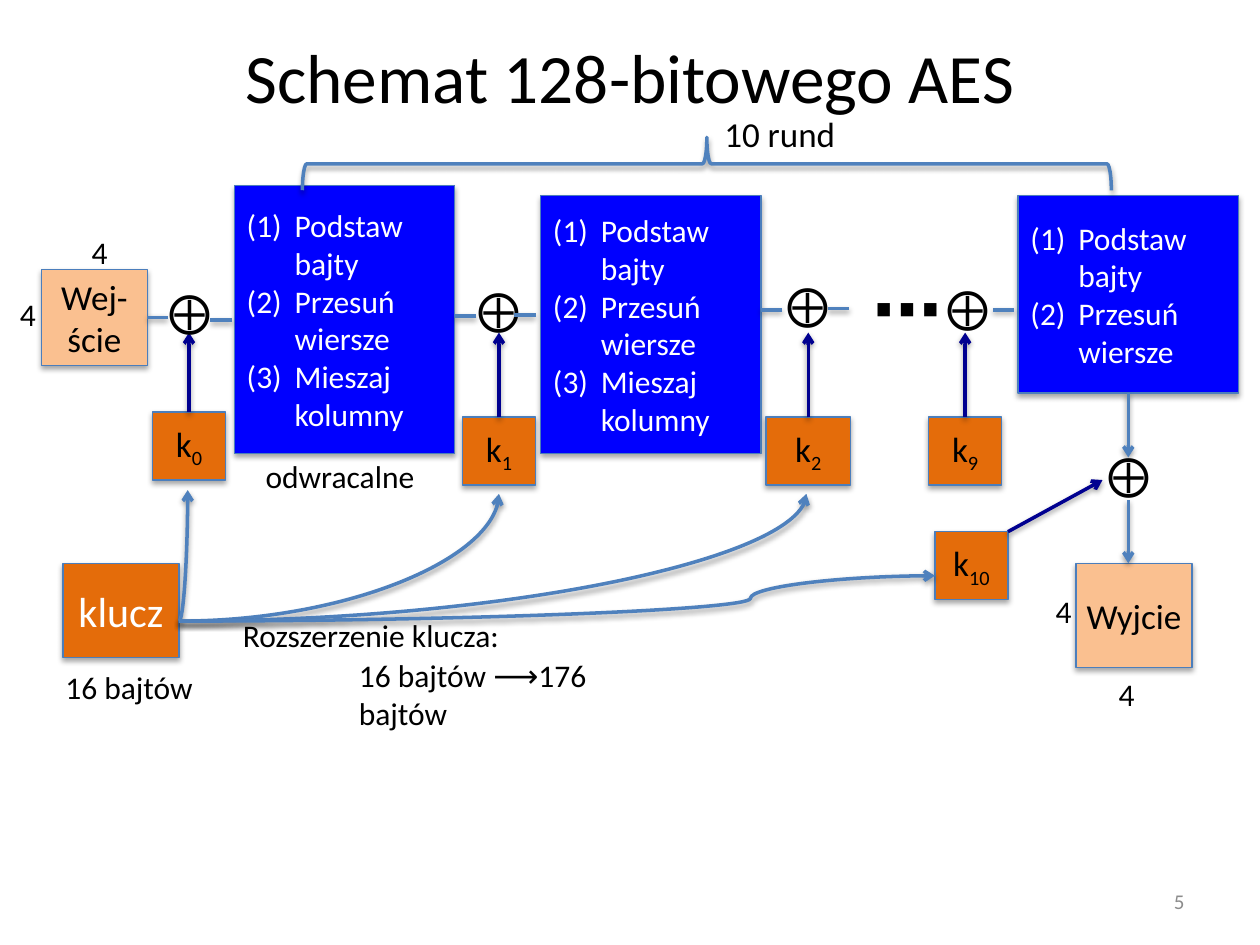
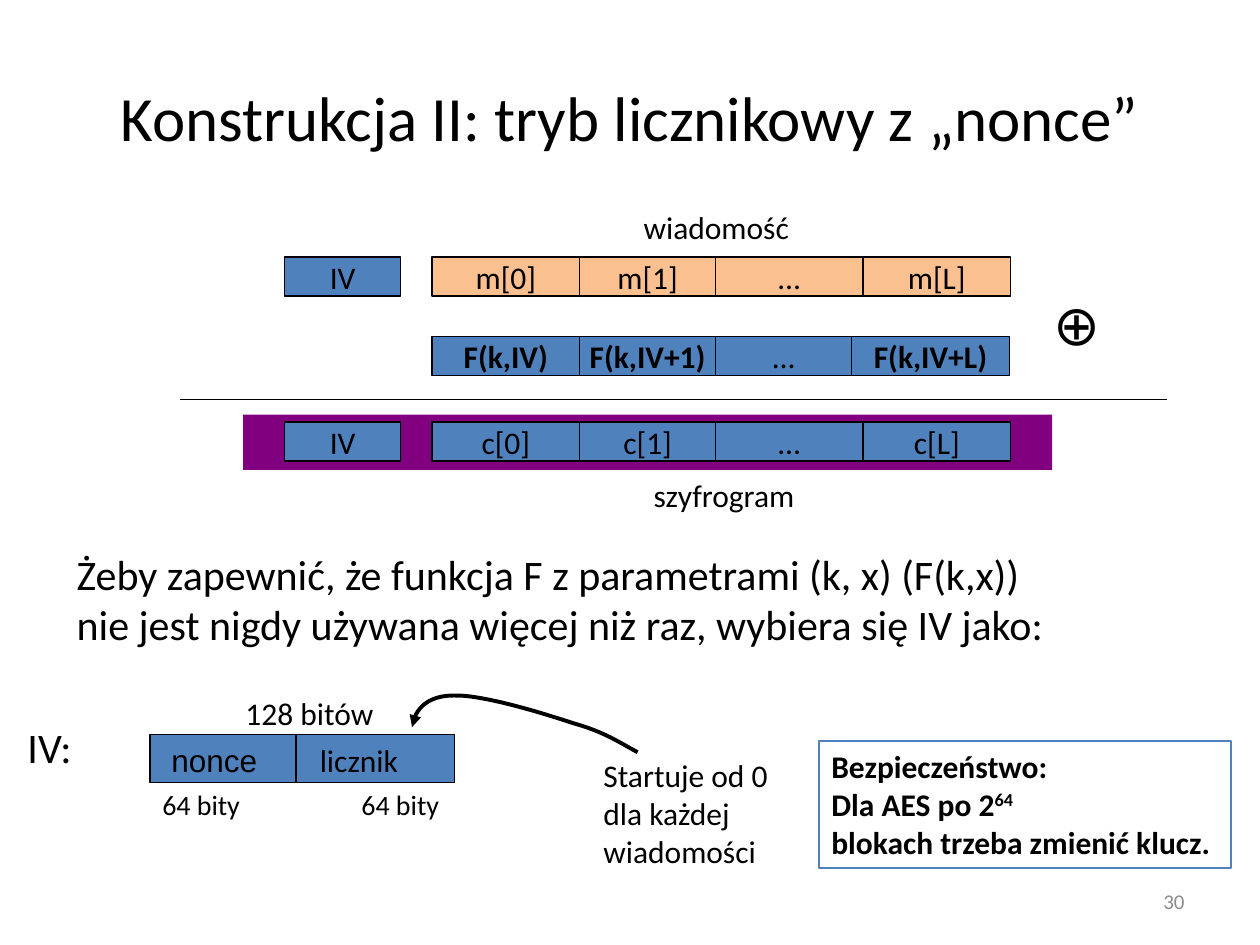
"""Builds two slides on the AES scheme and counter mode with a nonce."""
from lxml import etree
from pptx import Presentation
from pptx.dml.color import RGBColor
from pptx.enum import shapes, text
from pptx.oxml import ns
from pptx.util import Inches, Pt

BLACK = RGBColor(0x00, 0x00, 0x00)
WHITE = RGBColor(0xFF, 0xFF, 0xFF)
GREY = RGBColor(0x8C, 0x8C, 0x8C)
BLUE = RGBColor(0x4F, 0x81, 0xBD)
EDGE = RGBColor(0x4B, 0x7E, 0xBC)
NAVY = RGBColor(0x00, 0x00, 0x90)
ROYAL = RGBColor(0x00, 0x00, 0xFF)
PEACH = RGBColor(0xFA, 0xC0, 0x90)
ORANGE = RGBColor(0xE4, 0x6C, 0x0A)
PURPLE = RGBColor(0x80, 0x00, 0x80)
LEFT, MID, RIGHT = text.PP_ALIGN.LEFT, text.PP_ALIGN.CENTER, text.PP_ALIGN.RIGHT
TOP, HALF = text.MSO_ANCHOR.TOP, text.MSO_ANCHOR.MIDDLE
STRAIGHT, CURVE = shapes.MSO_CONNECTOR.STRAIGHT, shapes.MSO_CONNECTOR.CURVE


def put(box, words="", size=18, color=BLACK, fill=None, edge=None, align=None,
        anchor=None, wrap=False, bold=False, font="Calibri", shade=False,
        script="", base=0):
    """Adds a text box, or a rectangle when it has a fill or an edge."""
    place = [Inches(v) for v in box]
    rect = fill is not None or edge is not None
    if rect:
        shape = page.shapes.add_shape(shapes.MSO_SHAPE.RECTANGLE, *place)
        if not shade:
            shape.shadow.inherit = False
        if fill is None:
            shape.fill.background()
        else:
            shape.fill.solid()
            shape.fill.fore_color.rgb = fill
        if edge is None:
            shape.line.fill.background()
        else:
            shape.line.color.rgb = edge
            shape.line.width = Pt(0.75)
    else:
        shape = page.shapes.add_textbox(*place)
    frame = shape.text_frame
    frame.word_wrap = wrap
    frame.vertical_anchor = anchor or (HALF if rect else TOP)
    for n, line in enumerate(words.split("\n")):
        para = frame.add_paragraph() if n else frame.paragraphs[0]
        para.text = line
        para.alignment = align or (MID if rect else LEFT)
        para.font.name, para.font.size = font, Pt(size)
        para.font.bold, para.font.color.rgb = bold, color
    if script:
        run = para.add_run()
        run.text = script
        run._r.get_or_add_rPr().set("baseline", str(base))
    return shape


def link(x1, y1, x2, y2, color=BLUE, width=2, tip=False, kind=STRAIGHT, shade=True):
    """Adds a connector, with an arrowhead at its end if tip is set."""
    line = page.shapes.add_connector(kind, *[Inches(v) for v in (x1, y1, x2, y2)])
    line.line.color.rgb = color
    line.line.width = Pt(width)
    if tip:
        etree.SubElement(line.line._get_or_add_ln(), ns.qn("a:tailEnd"), type="arrow")
    if not shade:
        etree.SubElement(line._element.spPr, ns.qn("a:effectLst"))
    return line


deck = Presentation()
deck.slide_width, deck.slide_height = Inches(10), Inches(7.5)
pages = []
for title, size, tall, num in [
        ("Schemat 128-bitowego AES", 39.6, 0.61, "5"),
        ("Konstrukcja II: tryb licznikowy z „nonce”", 36, 1.25, "30")]:
    page = deck.slides.add_slide(deck.slide_layouts[6])
    pages.append(page)
    put((0.5, 0.3, 9, tall), title, size, align=MID, anchor=HALF, wrap=True)
    put((7.17, 6.95, 2.33, 0.4), num, 12, GREY, align=RIGHT, anchor=HALF, wrap=True)

page = pages[0]
steps = ["Podstaw bajty", "Przesuń wiersze", "Mieszaj kolumny"]
rounds = []
for x, y, high, count in [(1.86, 1.47, 2.13, 3), (4.29, 1.55, 2.05, 3),
                          (8.08, 1.55, 1.57, 2)]:
    box = put((x, y, 1.75, high), "\n".join(steps[:count]), color=WHITE, fill=ROYAL,
              edge=EDGE, align=LEFT, wrap=True, shade=True)
    box.text_frame.margin_right = 0
    for para in box.text_frame.paragraphs:
        props = para._p.get_or_add_pPr()
        props.set("marL", str(Inches(0.38)))
        props.set("indent", str(-Inches(0.38)))
        mark = etree.Element(ns.qn("a:buAutoNum"), type="arabicParenBoth")
        props.find(ns.qn("a:defRPr")).addprevious(mark)
    rounds.append(box)

start = put((0.33, 2.14, 0.84, 0.76), "Wej-ście", 20, fill=PEACH, edge=EDGE,
            wrap=True, shade=True)
end = put((8.54, 4.47, 0.92, 0.83), "Wyjcie", 20, fill=PEACH, edge=EDGE,
          wrap=True, shade=True)
end.text_frame.margin_left = end.text_frame.margin_right = 0
put((0.5, 4.47, 0.92, 0.75), "klucz", 24, WHITE, ORANGE, EDGE, wrap=True, shade=True)

for sub, x, y, wide in [("0", 1.21, 3.27, 0.58), ("1", 3.67, 3.31, 0.58),
                        ("2", 6.08, 3.31, 0.67), ("9", 7.37, 3.31, 0.58),
                        ("10", 7.42, 4.22, 0.58)]:
    key = put((x, y, wide, 0.54), "k", 20, fill=ORANGE, edge=EDGE, wrap=True,
              shade=True, script=sub, base=-25000)
    if sub == "10":
        link(x + wide, y, 8.75, 3.81, NAVY, tip=True)
    else:
        mid = x + wide / 2
        link(mid, y, mid, 2.64, NAVY, tip=True).begin_connect(key, 0)

for x, y in [(1.3, 2.35), (3.75, 2.33), (6.2, 2.29), (7.47, 2.32), (8.75, 3.64)]:
    put((x, y, 0.34, 0.5), "⨁", 24).rotation = 270
put((6.83, 2.05, 0.48, 0.77), "⋯", 40, bold=True)

link(1.17, 2.52, 1.33, 2.52).begin_connect(start, 3)
for x, y in [(1.67, 2.54), (3.61, 2.51), (4.08, 2.5), (6.04, 2.46), (6.57, 2.45),
             (7.88, 2.46)]:
    link(x, y, x + 0.17, y)
mid = 8.08 + 1.75 / 2
link(mid, 3.12, mid, 3.63, tip=True).begin_connect(rounds[2], 2)
link(mid, 3.97, mid, 4.47, tip=True)

for x, y in [(1.49, 3.89), (3.96, 3.92), (6.4, 3.92), (7.42, 4.57)]:
    geom = link(1.42, 4.93, x, y, tip=True, kind=CURVE)._element.spPr.prstGeom
    if y < 4:
        geom.set("prst", "curvedConnector2")
    else:
        etree.SubElement(geom.get_or_add_avLst(), ns.qn("a:gd"),
                         name="adj1", fmla="val 75600")

brace = page.shapes.add_shape(shapes.MSO_SHAPE.RIGHT_BRACE, Inches(5.4), Inches(-1.91),
                              Inches(0.42), Inches(6.42))
brace.rotation = 270
brace.fill.background()
brace.line.color.rgb = BLUE
brace.line.width = Pt(2)

for x, y in [(0.63, 1.8), (0.06, 2.29), (8.78, 5.31), (8.28, 4.65)]:
    put((x, y, 0.33, 0.4), "4")
put((0.42, 5.25, 1.22, 0.4), "16 bajtów")
put((1.83, 4.84, 2.26, 0.4), "Rozszerzenie klucza:")
put((2.75, 5.16, 2.73, 0.4), "16 bajtów ⟶176 bajtów", wrap=True)
put((2.01, 3.58, 1.4, 0.4), "odwracalne")
put((5.65, 0.84, 1.09, 0.44), "10 rund", 20)

page = pages[1]
put((1.93, 3.29, 6.42, 0.44), fill=PURPLE)
even = [1.17, 1.08, 1.17, 1.17]
for y, fill, bold, cells, widths in [
        (2.04, PEACH, False, ["m[0]", "m[1]", "…", "m[L]"], even),
        (2.67, BLUE, True, ["F(k,IV)", "F(k,IV+1)", "…", "F(k,IV+L)"],
         [1.17, 1.08, 1.08, 1.25]),
        (3.35, BLUE, False, ["c[0]", "c[1]", "…", "c[L]"], even)]:
    x = 3.43
    for cell, wide in zip(cells, widths):
        put((x, y, wide, 0.31), cell, fill=fill, edge=BLACK, bold=bold and cell != "…")
        x += wide
    if not bold:
        put((2.26, y, 0.92, 0.31), "IV", fill=BLUE, edge=BLACK)
put((8.26, 2.25, 0.55, 0.64), "⊕", 32)
link(1.43, 3.17, 9.26, 3.17, BLACK, 0.75, shade=False)

nonce = put((1.19, 5.83, 2.42, 0.38), "nonce", fill=BLUE, edge=BLACK, align=LEFT,
            anchor=TOP, wrap=True, font="Arial")
nonce.text_frame.margin_left = Inches(0.17)
link(2.35, 5.83, 2.35, 6.21, BLACK, 0.75, shade=False)

for box, words, size in [
        ((5.01, 1.6, 1.37, 0.4), "wiadomość", 18),
        ((5.09, 3.73, 1.33, 0.4), "szyfrogram", 18),
        ((0.51, 4.3, 8.02, 0.91), "Żeby zapewnić, że funkcja F z parametrami (k, x) (F(k,x))\v"
         "nie jest nigdy używana więcej niż raz, wybiera się IV jako:", 24),
        ((1.85, 5.46, 1.23, 0.4), "128 bitów", 18),
        ((2.44, 5.83, 0.83, 0.4), "licznik", 18),
        ((0.12, 5.68, 0.57, 0.5), "IV:", 24),
        ((1.19, 6.2, 0.83, 0.37), "64 bity", 16),
        ((2.77, 6.2, 0.83, 0.37), "64 bity", 16),
        ((4.69, 5.95, 1.52, 1.01), "Startuje od 0\vdla każdej\vwiadomości", 18)]:
    put(box, words, size)

note = put((6.5, 5.88, 3.27, 1.01), "Bezpieczeństwo:\vDla AES po 2", edge=BLUE,
           align=LEFT, anchor=TOP, wrap=True, bold=True, script="64", base=30000)
para = note.text_frame.paragraphs[0]
para.add_line_break()
para.add_run().text = "blokach trzeba zmienić klucz."

knots = [(5.06, 5.97), (4.91, 5.89), (4.8, 5.81), (4.55, 5.74), (4.31, 5.66),
         (3.82, 5.51), (3.6, 5.52), (3.39, 5.52), (3.29, 5.63), (3.27, 5.77)]
dots = []
for n in range(0, 9, 3):
    for step in range(1, 13):
        t = step / 12
        parts = [(1 - t) ** 3, 3 * t * (1 - t) ** 2, 3 * t * t * (1 - t), t ** 3]
        dots.append([Inches(sum(w * k[axis] for w, k in zip(parts, knots[n:n + 4])))
                     for axis in (0, 1)])
build = page.shapes.build_freeform(*[Inches(v) for v in knots[0]])
build.add_line_segments(dots, close=False)
arrow = build.convert_to_shape()
arrow.shadow.inherit = False
arrow.fill.background()
arrow.line.color.rgb = BLACK
arrow.line.width = Pt(2.25)
etree.SubElement(arrow.line._get_or_add_ln(), ns.qn("a:tailEnd"), type="triangle")

deck.save("out.pptx")
